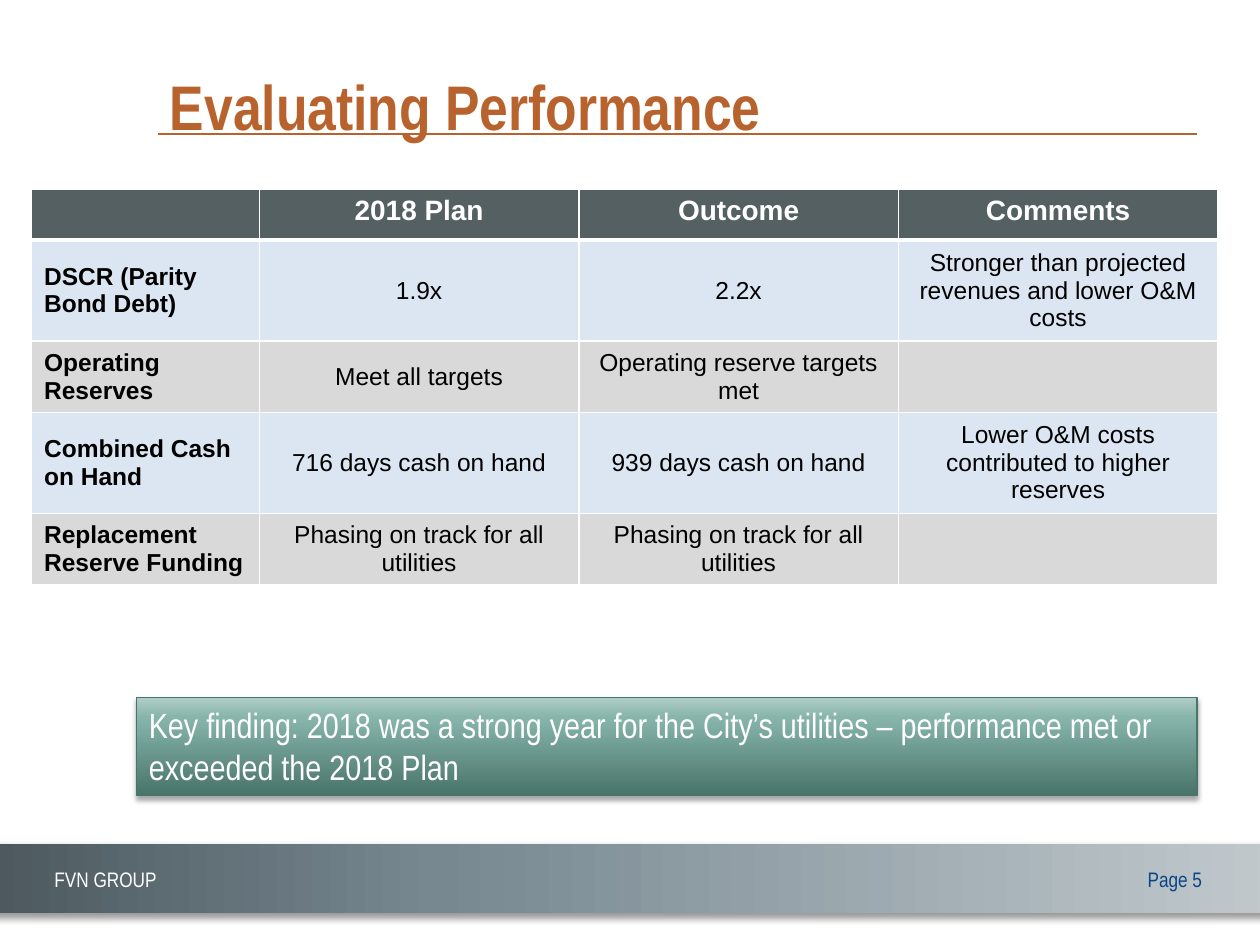
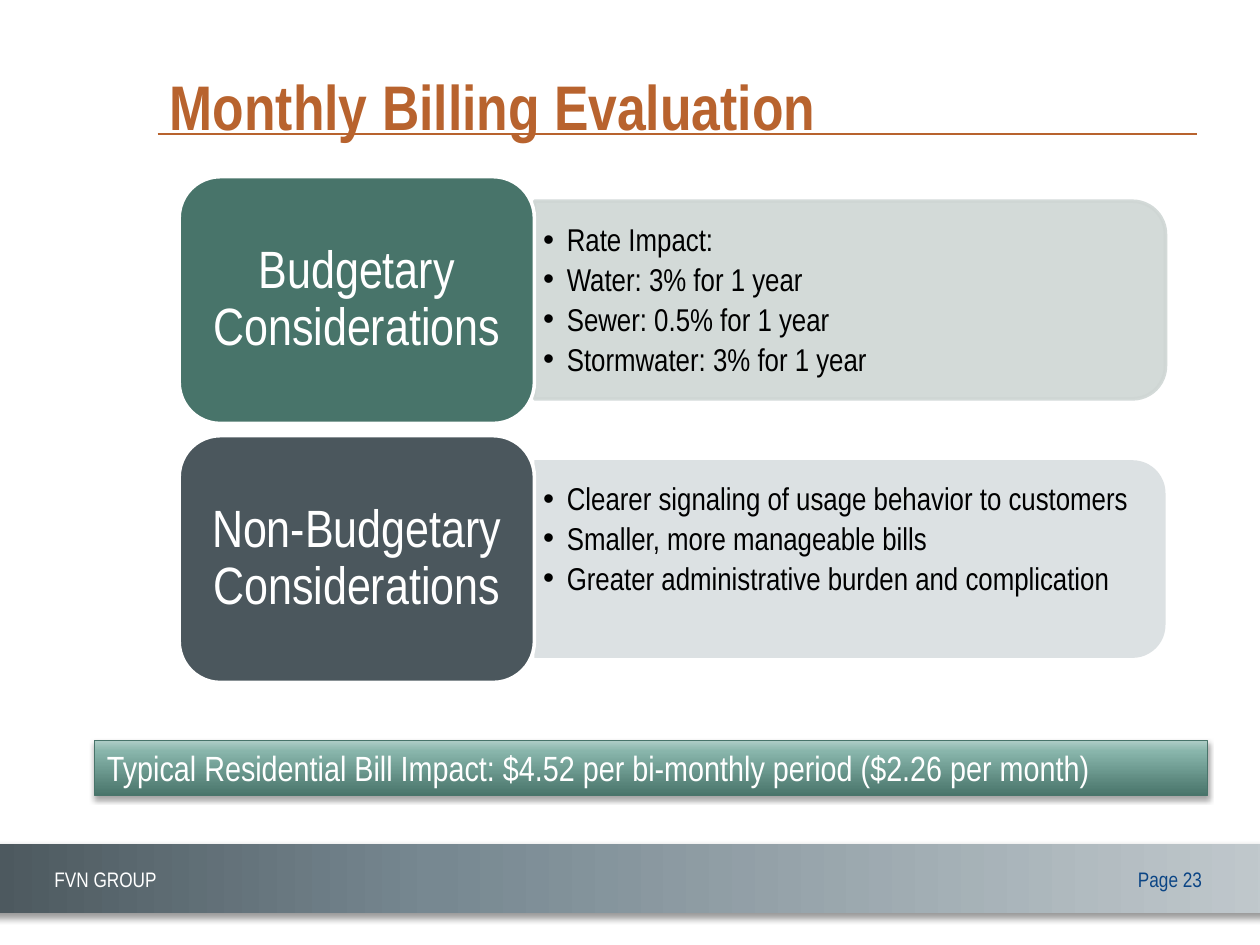
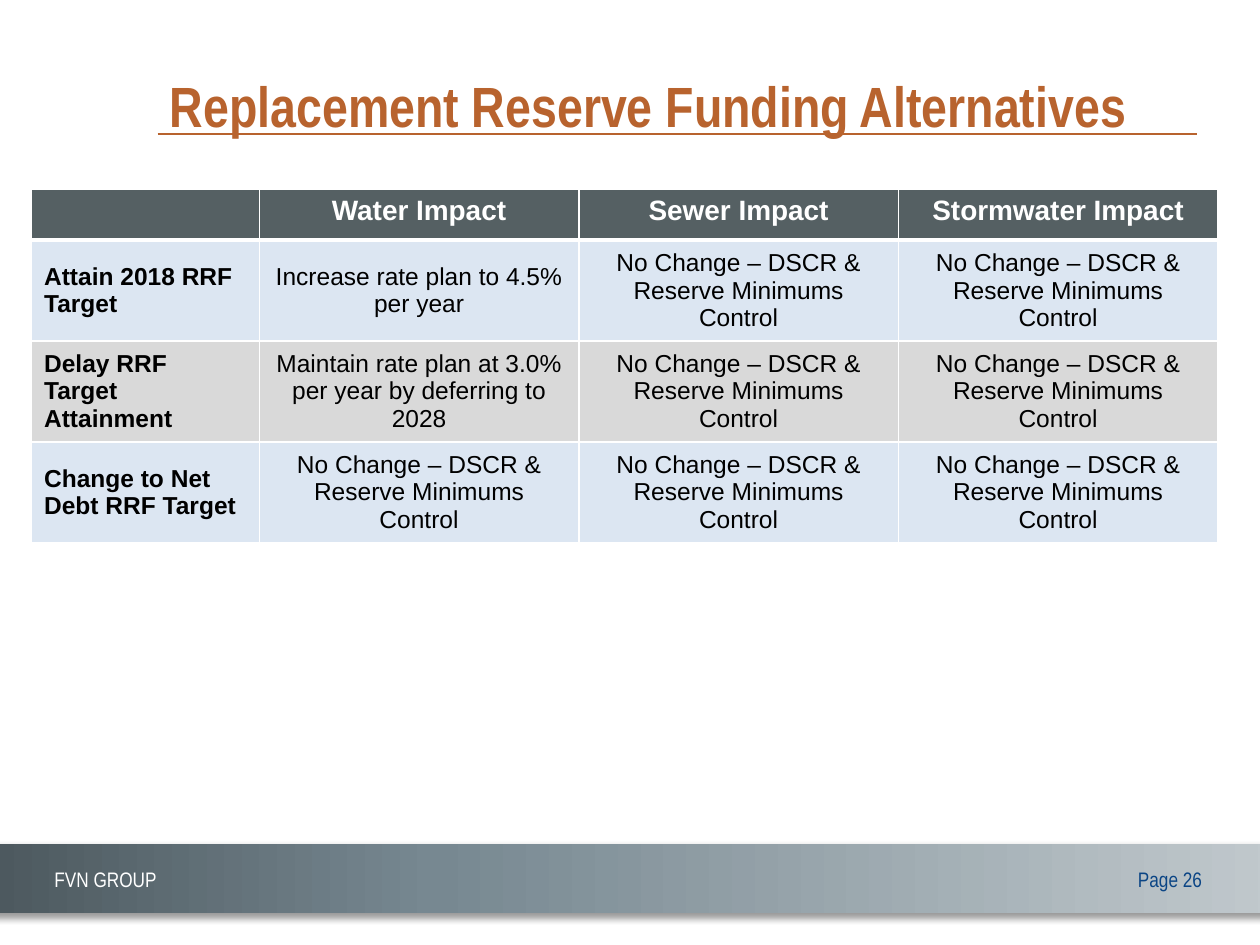
from pptx import Presentation
from pptx import oxml, util as u
from pptx.dml.color import RGBColor
from pptx.enum import shapes, text
from pptx.oxml.ns import nsdecls, qn

Pt = u.Pt
COLORS = {
    "title": "B8632E", "page_number": "0B4585", "white": "FFFFFF", "black": "000000",
    "header": "556063", "blue_row": "DCE6F2", "gray_row": "D9D9D9",
    "green": "48746A", "green_mid": "88B5AB", "green_light": "B0CEC7",
    "slate": "4B575D", "slate_mid": "778891", "slate_light": "C1C9CD",
    "green_panel": "CFD6D4", "slate_panel": "D9DEE0",
}
NARROW, SANS = "Arial Narrow", "Arial"
LEFT, CENTER, RIGHT = text.PP_ALIGN.LEFT, text.PP_ALIGN.CENTER, text.PP_ALIGN.RIGHT
TOP, MIDDLE = text.MSO_ANCHOR.TOP, text.MSO_ANCHOR.MIDDLE
INSETS = (7.2, 3.6, 7.2, 3.6)
TABLE_BOX = (18, 108, 678, 29.2)
LABEL_COLUMN = 130.2


def rgb(name):
    return RGBColor.from_string(COLORS[name])


def xml(markup):
    head, tail = markup.split(">", 1)
    if head.endswith("/"):
        return oxml.parse_xml(f"{head[:-1]} {nsdecls('a')}/>{tail}")
    return oxml.parse_xml(f"{head} {nsdecls('a')}>{tail}")


def add_run(para, words, size, color, font=NARROW, bold=False):
    span = para.add_run()
    span.text = words
    span.font.name = font
    span.font.size = Pt(size)
    span.font.bold = bold
    span.font.color.rgb = rgb(color)


def set_frame(frame, anchor, insets=INSETS):
    frame.word_wrap = True
    frame.vertical_anchor = anchor
    frame.margin_left, frame.margin_top, frame.margin_right, frame.margin_bottom = map(Pt, insets)


def add_text(page, box, words, size, color, align=LEFT, anchor=TOP, insets=INSETS, bold=False):
    frame = page.shapes.add_textbox(*map(Pt, box)).text_frame
    set_frame(frame, anchor, insets)
    para = frame.paragraphs[0]
    para.alignment = align
    add_run(para, words, size, color, bold=bold)
    return para


def add_block(page, kind, box, line=None, width=0.75):
    block = page.shapes.add_shape(kind, *map(Pt, box))
    block.shadow.inherit = False
    if line:
        block.line.color.rgb = rgb(line)
        block.line.width = Pt(width)
    else:
        block.line.fill.background()
    return block


def fill_solid(block, color):
    block.fill.solid()
    block.fill.fore_color.rgb = rgb(color)


def fill_gradient(block, stops, angle):
    block.fill.gradient()
    gradient = block.element.spPr.find(qn("a:gradFill"))
    marks = "".join(
        f'<a:gs pos="{place * 1000}"><a:srgbClr val="{COLORS[color]}"/></a:gs>'
        for place, color in stops)
    gradient.getparent().replace(gradient, xml(
        f'<a:gradFill rotWithShape="1"><a:gsLst>{marks}</a:gsLst>'
        f'<a:lin ang="{angle * 60000}" scaled="0"/></a:gradFill>'))


def add_shadow(block, opacity, blur, distance, angle):
    block.element.spPr.find(qn("a:effectLst")).append(xml(
        f'<a:outerShdw blurRad="{Pt(blur)}" dist="{Pt(distance)}" dir="{angle * 60000}" '
        f'rotWithShape="0"><a:srgbClr val="{COLORS["black"]}">'
        f'<a:alpha val="{opacity * 1000}"/></a:srgbClr></a:outerShdw>'))


def add_footer(page, box, number):
    left, top, width, height = box
    band = add_block(page, shapes.MSO_SHAPE.RECTANGLE, box)
    fill_gradient(band, [(0, "slate_light"), (65, "slate_mid"), (100, "slate")], 180)
    add_shadow(band, 40, 4, 3, 45)
    add_text(page, (left + width - 96, top + 9, 58, 21.6), f"Page {number}", 12,
             "page_number", RIGHT)
    add_text(page, (left + 36, top + 9, 102, 21.6), "FVN GROUP", 12, "white")


def add_title(page, box, words, size):
    left, top, width, height = box
    rule = page.shapes.add_connector(
        shapes.MSO_CONNECTOR.STRAIGHT,
        Pt(left), Pt(top + 52.5), Pt(left + width), Pt(top + 52.5))
    rule.line.color.rgb = rgb("title")
    rule.line.width = Pt(1.5)
    rule.element.spPr.append(xml("<a:effectLst/>"))
    add_text(page, box, words, size, "title", anchor=MIDDLE, bold=True)


def add_page(deck, title, number, title_size=36):
    page = deck.slides.add_slide(deck.slide_layouts[6])
    add_footer(page, (-12, 482.4, 744, 39.6), number)
    add_title(page, (90, 24, 594, 72), title, title_size)
    return page


def add_finding(page, box, words):
    banner = add_block(page, shapes.MSO_SHAPE.RECTANGLE, box, "green")
    fill_gradient(banner, [(0, "green"), (80, "green_mid"), (100, "green_light")], 270)
    add_shadow(banner, 35, 3.1, 1.8, 90)
    set_frame(banner.text_frame, TOP)
    para = banner.text_frame.paragraphs[0]
    para.alignment = LEFT
    add_run(para, words, 20, "white")


def style_cell(cell, words, is_header, is_label, fill):
    properties = cell._tc.get_or_add_tcPr()
    for side in "LRTB":
        heavy = is_header and side == "B"
        properties.append(xml(
            f'<a:ln{side} w="{Pt(3 if heavy else 1)}"><a:solidFill>'
            f'<a:srgbClr val="{COLORS["white"]}"/></a:solidFill></a:ln{side}>'))
    cell.fill.solid()
    cell.fill.fore_color.rgb = rgb(fill)
    cell.vertical_anchor = TOP if is_header else MIDDLE
    para = cell.text_frame.paragraphs[0]
    para.alignment = LEFT if is_label else CENTER
    if words:
        add_run(para, words, 16 if is_header else 14, "white" if is_header else "black",
                SANS, is_header or is_label)


def add_impact_table(page, box, rows):
    left, top, width, row_height = box
    columns = len(rows[0])
    grid = page.shapes.add_table(
        len(rows), columns, Pt(left), Pt(top), Pt(width), Pt(row_height * len(rows))).table
    for index, column in enumerate(grid.columns):
        column.width = Pt((width - LABEL_COLUMN) / (columns - 1) if index else LABEL_COLUMN)
    for y, row in enumerate(rows):
        grid.rows[y].height = Pt(row_height)
        fill = "header" if y == 0 else "blue_row" if y % 2 else "gray_row"
        for x, words in enumerate(row):
            style_cell(grid.cell(y, x), words, y == 0, x == 0, fill)


def add_bullets(page, box, lines):
    frame = page.shapes.add_textbox(*map(Pt, box)).text_frame
    set_frame(frame, TOP, (5, 7.5, 5, 3))
    for index, words in enumerate(lines):
        para = frame.add_paragraph() if index else frame.paragraphs[0]
        properties = para._p.get_or_add_pPr()
        properties.set("marL", str(Pt(13.5)))
        properties.set("indent", str(Pt(-13.5)))
        properties.append(xml('<a:buFont typeface="Arial"/>'))
        properties.append(xml('<a:buChar char="•"/>'))
        para.line_spacing = 0.9
        para.space_after = Pt(3.4)
        add_run(para, words, 18, "black")


def add_consideration(page, box, label, lines, label_color, panel_color, outlined):
    left, top, width, height = box
    label_width, panel_height = 203, 113
    panel_width = width - label_width
    panel_left = left + label_width
    center_x, center_y = panel_left + panel_width / 2, top + height / 2
    panel = add_block(
        page, shapes.MSO_SHAPE.ROUND_2_SAME_RECTANGLE,
        (center_x - panel_height / 2, center_y - panel_width / 2, panel_height, panel_width),
        panel_color if outlined else None, 2)
    panel.rotation = 90
    fill_solid(panel, panel_color)
    for shade in panel.element.spPr.iter(qn("a:srgbClr")):
        shade.append(xml('<a:alpha val="90000"/>'))
    add_bullets(page, (panel_left, center_y - 51, panel_width - 5, 102), lines)
    tile = add_block(page, shapes.MSO_SHAPE.ROUNDED_RECTANGLE,
                     (left, top, label_width, height), "white", 2)
    fill_solid(tile, label_color)
    para = add_text(page, (left + 6.8, top + 6.8, label_width - 13.6, height - 13.6), label, 30,
                    "white", CENTER, MIDDLE, (8.6, 4.3, 8.6, 4.3))
    para.line_spacing = 0.9


def build_performance(deck):
    page = add_page(deck, "Evaluating Performance", 5)
    add_impact_table(page, TABLE_BOX, [
        ("", "2018 Plan", "Outcome", "Comments"),
        ("DSCR (Parity Bond Debt)", "1.9x", "2.2x",
         "Stronger than projected revenues and lower O&M costs"),
        ("Operating Reserves", "Meet all targets", "Operating reserve targets met", ""),
        ("Combined Cash on Hand", "716 days cash on hand", "939 days cash on hand",
         "Lower O&M costs contributed to higher reserves"),
        ("Replacement Reserve Funding", "Phasing on track for all utilities",
         "Phasing on track for all utilities", ""),
    ])
    add_finding(page, (78, 398.6, 606, 55.8),
                "Key finding: 2018 was a strong year for the City’s utilities – "
                "performance met or exceeded the 2018 Plan")


def build_billing(deck):
    page = add_page(deck, "Monthly Billing Evaluation", 23)
    considerations = [
        ("Budgetary Considerations",
         ["Rate Impact:", "Water: 3% for 1 year", "Sewer: 0.5% for 1 year",
          "Stormwater: 3% for 1 year"], "green", "green_panel", True),
        ("Non-Budgetary Considerations",
         ["Clearer signaling of usage behavior to customers", "Smaller, more manageable bills",
          "Greater administrative burden and complication"], "slate", "slate_panel", False),
    ]
    for index, consideration in enumerate(considerations):
        add_consideration(page, (102.4, 101 + 148 * index, 563.6, 141), *consideration)
    add_finding(page, (54, 423, 636, 31.6),
                "Typical Residential Bill Impact: $4.52 per bi-monthly period ($2.26 per month)")


def build_alternatives(deck):
    page = add_page(deck, "Replacement Reserve Funding Alternatives", 26, 32.4)
    no_change = "No Change – DSCR & Reserve Minimums Control"
    add_impact_table(page, TABLE_BOX, [
        ("", "Water Impact", "Sewer Impact", "Stormwater Impact"),
        ("Attain 2018 RRF Target", "Increase rate plan to 4.5% per year", no_change, no_change),
        ("Delay RRF Target Attainment",
         "Maintain rate plan at 3.0% per year by deferring to 2028", no_change, no_change),
        ("Change to Net Debt RRF Target", no_change, no_change, no_change),
    ])


def main():
    deck = Presentation()
    deck.slide_width, deck.slide_height = Pt(720), Pt(540)
    build_performance(deck)
    build_billing(deck)
    build_alternatives(deck)
    deck.save("out.pptx")


if __name__ == "__main__":
    main()
